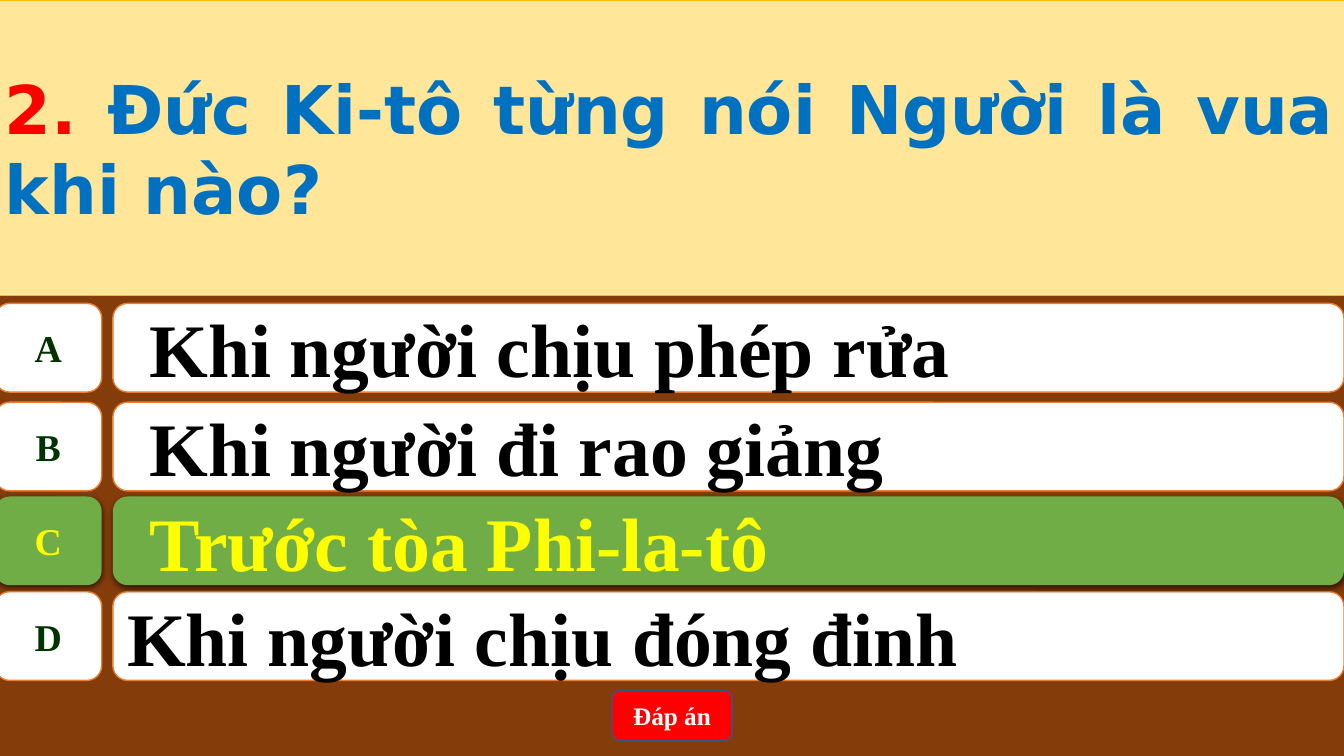
import pptx
import pptx.dml.color
import pptx.enum.shapes
import pptx.enum.text
import pptx.oxml
import pptx.oxml.ns
import pptx.util

RGB = pptx.dml.color.RGBColor
KIND = pptx.enum.shapes.MSO_SHAPE
ALIGN = pptx.enum.text.PP_ALIGN

BROWN = RGB(0x84, 0x3C, 0x0B)
CREAM = RGB(0xFF, 0xE6, 0x99)
GOLD = RGB(0xFF, 0xC0, 0x00)
ORANGE = RGB(0xED, 0x7D, 0x31)
WHITE = RGB(0xFF, 0xFF, 0xFF)
BLACK = RGB(0x00, 0x00, 0x00)
FOREST = RGB(0x00, 0x33, 0x00)
GREEN = RGB(0x70, 0xAD, 0x47)
YELLOW = RGB(0xFF, 0xFF, 0x00)
RED = RGB(0xFF, 0x00, 0x00)
BLUE = RGB(0x00, 0x70, 0xC0)
NAVY = RGB(0x32, 0x54, 0x91)

WIDE = pptx.util.Inches(13.33)
HIGH = pptx.util.Inches(7.5)
SERIF = "Times New Roman"
SANS = "DejaVu Sans"

LEFT = -0.38
TAG = (LEFT, 7.95)
BAR = (8.4, 91.6)
TALL = 11.73

ROWS = [
    ("A", "Khi người chịu phép rửa", 40.13, True, False),
    ("B", "Khi người đi rao giảng", 53.2, True, False),
    ("D", "Khi người chịu đóng đinh", 78.27, False, False),
    ("C", "Trước tòa Phi-la-tô", 65.67, True, True),
]


def apply(item, values):
    for name, value in values.items():
        setattr(item, name, value)


def place(x, y, w, h):
    return {
        "left": int(WIDE * x / 100),
        "top": int(HIGH * y / 100),
        "width": int(WIDE * w / 100),
        "height": int(HIGH * h / 100),
    }


def paint(shape, fill, line=None, width=1):
    shape.fill.solid()
    shape.fill.fore_color.rgb = fill
    if line is None:
        shape.line.fill.background()
    else:
        shape.line.color.rgb = line
        shape.line.width = pptx.util.Pt(width)


def write(shape, runs, size, face, align, wrap=True):
    frame = shape.text_frame
    apply(frame, {
        "auto_size": pptx.enum.text.MSO_AUTO_SIZE.NONE,
        "vertical_anchor": pptx.enum.text.MSO_ANCHOR.MIDDLE,
        "word_wrap": wrap,
    })
    para = frame.paragraphs[0]
    para.alignment = align
    for text, color in runs:
        run = para.add_run()
        run.text = text
        apply(run.font, {"size": pptx.util.Pt(size), "name": face, "bold": True})
        run.font.color.rgb = color
    return para


def panel(parent, kind, area, fill, line):
    shape = parent.add_shape(kind, **place(*area))
    shape.shadow.inherit = False
    paint(shape, fill, line)
    return shape


def shade(shape):
    space = pptx.oxml.ns.nsdecls("a")
    effect = shape.fill._xPr.find(pptx.oxml.ns.qn("a:effectLst"))
    effect.append(pptx.oxml.parse_xml(
        f'<a:outerShdw {space} blurRad="57150" dist="19050" dir="5400000" '
        'algn="ctr" rotWithShape="0"><a:srgbClr val="000000">'
        '<a:alpha val="63000"/></a:srgbClr></a:outerShdw>'
    ))


def indent(para):
    para.level = 1
    props = para._p.get_or_add_pPr()
    props.set("marL", str(pptx.util.Inches(0.5)))
    props.set("indent", str(pptx.util.Inches(-0.28)))


def choice(slide, mark, text, top, inset, right):
    fill, line = (GREEN, None) if right else (WHITE, ORANGE)
    group = slide.shapes.add_group_shape().shapes
    bar = panel(group, KIND.ROUNDED_RECTANGLE, (BAR[0], top, BAR[1], TALL), fill, line)
    tag = panel(group, KIND.FLOWCHART_ALTERNATE_PROCESS,
                (TAG[0], top, TAG[1], TALL), fill, line)
    para = write(bar, [(text, YELLOW if right else BLACK)], 54, SERIF, ALIGN.LEFT)
    if inset:
        indent(para)
    write(tag, [(mark, YELLOW if right else FOREST)], 27, SERIF, ALIGN.CENTER, False)
    if right:
        shade(bar)
        shade(tag)


def question(slide):
    title = slide.shapes.title
    apply(title, place(LEFT, 0, 100.45, 39.07))
    paint(title, CREAM, GOLD, 0.5)
    runs = [("2. ", RED), ("Đức Ki-tô từng nói Người là vua khi nào?", BLUE)]
    write(title, runs, 48, SANS, ALIGN.JUSTIFY)


def button(slide):
    shape = panel(slide.shapes, KIND.ROUNDED_RECTANGLE,
                  (45.54, 91.33, 8.93, 6.67), RED, NAVY)
    write(shape, [("Đáp án", WHITE)], 18, SERIF, ALIGN.CENTER)


def main():
    deck = pptx.Presentation()
    apply(deck, {"slide_width": WIDE, "slide_height": HIGH})
    slide = deck.slides.add_slide(deck.slide_layouts[5])
    back = slide.background.fill
    back.solid()
    back.fore_color.rgb = BROWN
    question(slide)
    for row in ROWS:
        choice(slide, *row)
    button(slide)
    deck.save("out.pptx")


if __name__ == "__main__":
    main()
